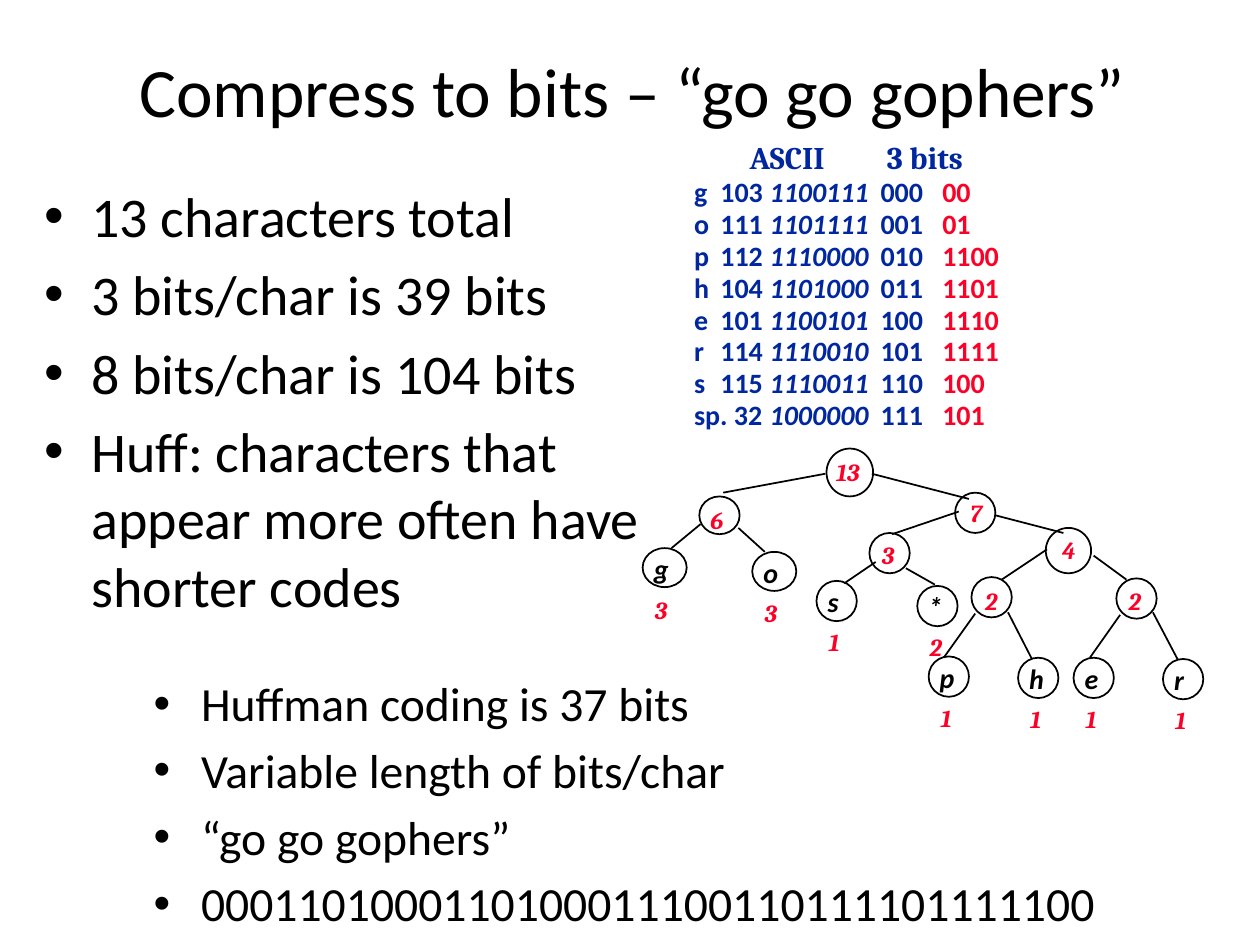
"""Build the slide on Huffman coding of "go go gophers"."""
from dataclasses import dataclass

from lxml.etree import SubElement
from pptx import Presentation
from pptx.dml.color import RGBColor
from pptx.enum.shapes import MSO_CONNECTOR, MSO_SHAPE
from pptx.enum.text import MSO_ANCHOR, MSO_AUTO_SIZE, PP_ALIGN
from pptx.oxml.ns import qn
from pptx.util import Inches, Pt

BLACK, RED, BLUE = "000000", "FC0128", "00279F"
SANS, SERIF = "Calibri", "Cambria"


@dataclass
class Node:
    x: float
    y: float
    count: str
    char: str = ""
    wide: float = 0.32
    high: float = 0.32
    shift: float = 0.0
    drop: float = 0.01


@dataclass
class Edge:
    x1: float
    y1: float
    x2: float
    y2: float


@dataclass
class Code:
    char: str
    bits: str
    fixed: str
    huff: str


NODES = [
    Node(6.56, 3.56, "13", wide=0.37, high=0.38, shift=-0.02, drop=0.02),
    Node(5.55, 3.94, "6", high=0.3, shift=-0.01, drop=0.02),
    Node(7.58, 3.91, "7", shift=0.02, drop=-0.01),
    Node(6.9, 4.23, "3"),
    Node(8.3, 4.19, "4", wide=0.36, high=0.36, shift=0.03),
    Node(7.71, 4.58, "2", shift=0.01, drop=0.02),
    Node(8.86, 4.59, "2"),
    Node(5.1, 4.35, "3", "g", wide=0.35, high=0.31),
    Node(5.97, 4.38, "3", "o", wide=0.35, high=0.31),
    Node(6.48, 4.61, "1", "s"),
    Node(7.28, 4.65, "2", "*"),
    Node(7.37, 5.21, "1", "p"),
    Node(8.08, 5.22, "1", "h"),
    Node(8.52, 5.22, "1", "e"),
    Node(9.23, 5.23, "1", "r"),
]
EDGES = [
    Edge(5.74, 3.91, 6.55, 3.76),
    Edge(7.69, 3.96, 6.92, 3.76),
    Edge(5.56, 4.16, 5.33, 4.35),
    Edge(5.86, 4.19, 6.07, 4.38),
    Edge(7.08, 4.24, 7.61, 4.06),
    Edge(7.9, 4.09, 8.44, 4.23),
    Edge(6.95, 4.46, 6.7, 4.63),
    Edge(7.19, 4.51, 7.42, 4.64),
    Edge(8.31, 4.36, 7.95, 4.6),
    Edge(8.68, 4.41, 8.94, 4.6),
    Edge(7.74, 4.87, 7.49, 5.22),
    Edge(8, 4.86, 8.19, 5.23),
    Edge(8.89, 4.88, 8.65, 5.22),
    Edge(9.15, 4.86, 9.35, 5.24),
]
CODES = [
    Code("g\t103", "1100111", "000", "00"),
    Code("o\t111", "1101111", "001", "01"),
    Code("p\t112", "1110000", "010", "1100"),
    Code("h\t104", "1101000", "011", "1101"),
    Code("e\t101", "1100101", "100", "1110"),
    Code("r\t114", "1110010", "101", "1111"),
    Code("s\t115", "1110011", "110", "100"),
    Code("sp. 32", "1000000", "111", "101"),
]
FACTS = [
    "13 characters total",
    "3 bits/char is 39 bits",
    "8 bits/char is 104 bits",
    "Huff: characters that appear more often have shorter codes",
]
NOTES = [
    "Huffman coding is 37 bits",
    "Variable length of bits/char",
    "“go go gophers”",
    "0001101000110100011100110111101111100",
]


def paint(target, color: str) -> None:
    """Set a colour format from a hex string."""
    target.rgb = RGBColor.from_string(color)


def place(shape, x: float, y: float, wide: float, high: float) -> None:
    """Move and size a shape, in inches."""
    shape.left, shape.top = Inches(x), Inches(y)
    shape.width, shape.height = Inches(wide), Inches(high)


def add_run(para, text: str, size: float, face: str = SANS,
            color: str = BLACK, bold: bool = False,
            slant: bool = False) -> None:
    """Add one styled run to a paragraph."""
    run = para.add_run()
    run.text = text
    font = run.font
    font.name, font.size = face, Pt(size)
    font.bold, font.italic = bold, slant
    paint(font.color, color)


def add_box(slide, x: float, y: float, wide: float, high: float):
    """Add a wrapped text box and return its frame."""
    frame = slide.shapes.add_textbox(
        Inches(x), Inches(y), Inches(wide), Inches(high)).text_frame
    frame.word_wrap = True
    return frame


def fill_list(holder, lines: list[str], size: float) -> None:
    """Fill a body placeholder with bullet lines."""
    frame = holder.text_frame
    frame.auto_size = MSO_AUTO_SIZE.NONE
    for i, line in enumerate(lines):
        para = frame.add_paragraph() if i else frame.paragraphs[0]
        add_run(para, line, size)


def draw_edge(slide, edge: Edge) -> None:
    """Draw one branch of the tree."""
    line = slide.shapes.add_connector(
        MSO_CONNECTOR.STRAIGHT, Inches(edge.x1), Inches(edge.y1),
        Inches(edge.x2), Inches(edge.y2))
    line.line.width = Pt(1)
    paint(line.line.color, BLACK)
    SubElement(line._element.spPr, qn("a:effectLst"))


def draw_node(slide, node: Node) -> None:
    """Draw a node with its count, and its letter if it is a leaf."""
    oval = slide.shapes.add_shape(
        MSO_SHAPE.OVAL, Inches(node.x), Inches(node.y),
        Inches(node.wide), Inches(node.high))
    oval.shadow.inherit = False
    oval.fill.background()
    oval.line.width = Pt(1)
    paint(oval.line.color, BLACK)
    drop = node.drop
    if node.char:
        drop = 0.32
        frame = add_box(slide, node.x - 0.01, node.y - 0.02, 0.35, 0.36)
        add_run(frame.paragraphs[0], node.char, 16, bold=True, slant=True)
    wide = 0.21 + 0.16 * len(node.count)
    frame = add_box(slide, node.x + node.shift, node.y + drop, wide, 0.33)
    add_run(frame.paragraphs[0], node.count, 14, SERIF, RED, True, True)


def set_tabs(para, stops: list[float]) -> None:
    """Give a code line its spacing and tab stops, in inches."""
    para.line_spacing = 0.95
    tabs = SubElement(para._p.get_or_add_pPr(), qn("a:tabLst"))
    for stop in stops:
        SubElement(tabs, qn("a:tab"), pos=str(Inches(stop)), algn="l")


def draw_codes(slide) -> None:
    """Write the code table in tabbed lines."""
    frame = add_box(slide, 5.41, 1.07, 3.99, 2.53)
    head = frame.paragraphs[0]
    set_tabs(head, [0.44, 1.53])
    add_run(head, "\tASCII\t3 bits", 18, SERIF, BLUE, True)
    for code in CODES:
        para = frame.add_paragraph()
        set_tabs(para, [0.21, 0.6, 1.48, 1.97])
        add_run(para, code.char + "\t", 16, color=BLUE, bold=True)
        add_run(para, code.bits + "\t", 16, color=BLUE, bold=True, slant=True)
        add_run(para, code.fixed + "\t", 16, color=BLUE, bold=True)
        add_run(para, code.huff, 16, color=RED, bold=True)


def main() -> None:
    """Build and save the deck."""
    deck = Presentation()
    deck.slide_width, deck.slide_height = Inches(10), Inches(7.5)
    slide = deck.slides.add_slide(deck.slide_layouts.get_by_name("Two Content"))
    title, facts, notes = list(slide.placeholders)[:3]
    place(title, 0.89, 0.32, 8.26, 0.78)
    title.text_frame.auto_size = MSO_AUTO_SIZE.NONE
    title.text_frame.vertical_anchor = MSO_ANCHOR.MIDDLE
    para = title.text_frame.paragraphs[0]
    para.alignment = PP_ALIGN.CENTER
    add_run(para, "Compress to bits – “go go gophers”", 39.6)
    place(facts, 0.25, 1.39, 5.02, 4.92)
    fill_list(facts, FACTS, 32)
    place(notes, 1.12, 5.3, 8.14, 1.88)
    fill_list(notes, NOTES, 27.2)
    for edge in EDGES:
        draw_edge(slide, edge)
    for node in NODES:
        draw_node(slide, node)
    draw_codes(slide)
    deck.save("out.pptx")


if __name__ == "__main__":
    main()
